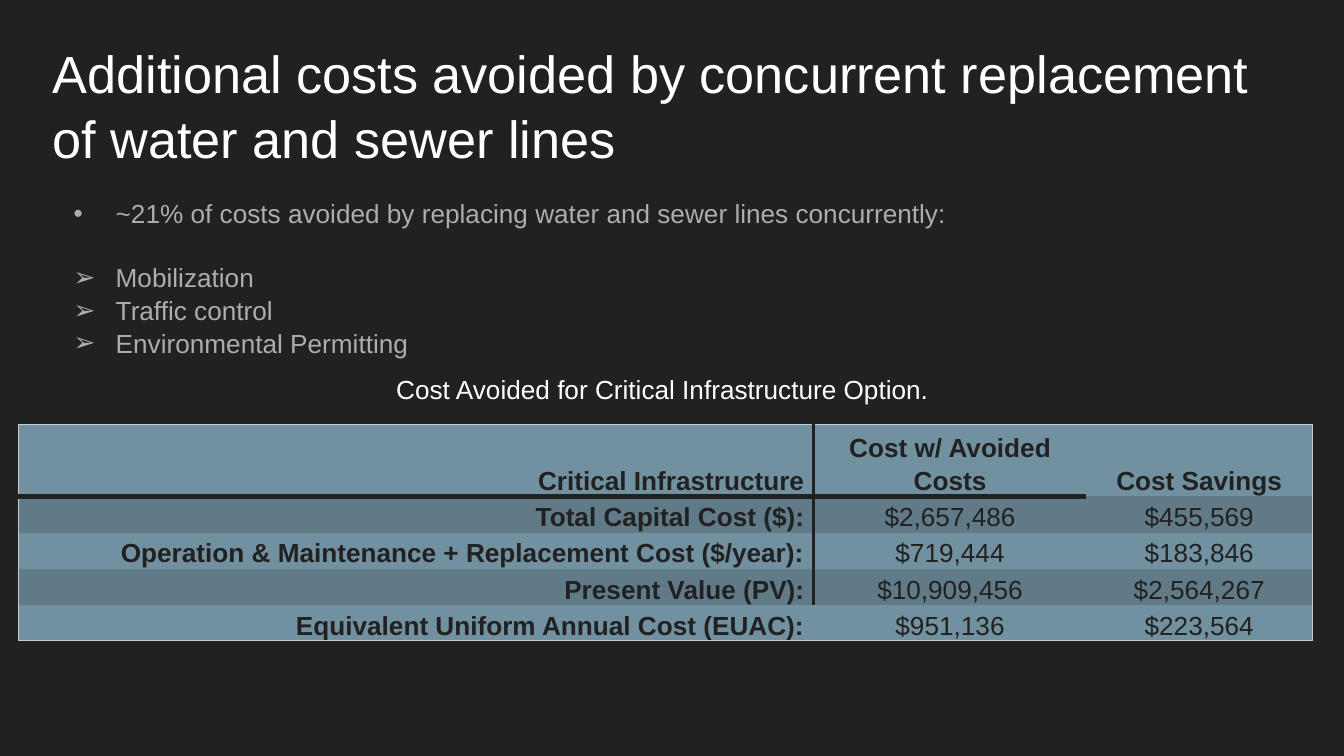
from dataclasses import dataclass

from lxml.etree import SubElement
from pptx import Presentation
from pptx.dml.color import RGBColor
from pptx.enum.text import MSO_ANCHOR, MSO_AUTO_SIZE, PP_ALIGN
from pptx.oxml.ns import qn
from pptx.util import Pt


@dataclass(frozen=True)
class Theme:
    font: str = "Arial"
    title_size: float = 28
    text_size: float = 14
    background: str = "212121"
    light: str = "FFFFFF"
    muted: str = "ADADAD"
    row: str = "7190A0"
    band: str = "617A87"
    frame: str = "C5CCD1"


THEME = Theme()
NO_GRID_STYLE = "{2D5ABB26-0587-4C30-8999-92F81FD0307C}"

BULLETS = [
    ("•", "~21% of costs avoided by replacing water and sewer lines concurrently:"),
    ("➢", "Mobilization"),
    ("➢", "Traffic control"),
    ("➢", "Environmental Permitting"),
]
COSTS = [
    ("Critical Infrastructure", "Cost w/ Avoided Costs", "Cost Savings"),
    ("Total Capital Cost ($):", "$2,657,486", "$455,569"),
    ("Operation & Maintenance + Replacement Cost ($/year):", "$719,444", "$183,846"),
    ("Present Value (PV):", "$10,909,456", "$2,564,267"),
    ("Equivalent Uniform Annual Cost (EUAC):", "$951,136", "$223,564"),
]


def style_paragraph(paragraph, size, color, bold=False, align=PP_ALIGN.LEFT, spacing=1.0):
    paragraph.font.name = THEME.font
    paragraph.font.size = Pt(size)
    paragraph.font.bold = bold
    paragraph.font.color.rgb = RGBColor.from_string(color)
    paragraph.alignment = align
    paragraph.line_spacing = spacing


def set_bullet(paragraph, character, indent):
    properties = paragraph._p.get_or_add_pPr()
    properties.set("marL", str(Pt(indent)))
    properties.set("indent", str(-Pt(indent)))
    color = SubElement(properties, qn("a:buClr"))
    SubElement(color, qn("a:srgbClr"), val=THEME.muted)
    SubElement(properties, qn("a:buFont"), typeface=THEME.font)
    SubElement(properties, qn("a:buChar"), char=character)


def set_border(cell, side, color, width):
    """Draw one edge of a cell; side is L, R, T or B, called in that order."""
    line = SubElement(cell._tc.get_or_add_tcPr(), qn(f"a:ln{side}"), w=str(Pt(width)))
    fill = SubElement(line, qn("a:solidFill"))
    SubElement(fill, qn("a:srgbClr"), val=color)


def add_title(slide, text, left, top, width, height):
    title = slide.shapes.title
    title.left, title.top, title.width, title.height = map(Pt, (left, top, width, height))
    frame = title.text_frame
    frame.text = text
    frame.word_wrap = True
    frame.auto_size = MSO_AUTO_SIZE.NONE
    frame.vertical_anchor = MSO_ANCHOR.TOP
    frame.margin_top = frame.margin_bottom = Pt(7.2)
    style_paragraph(frame.paragraphs[0], THEME.title_size, THEME.light, spacing=1.05)


def add_bullets(slide, bullets, left, top, width, height):
    frame = slide.shapes.add_textbox(*map(Pt, (left, top, width, height))).text_frame
    frame.word_wrap = True
    frame.text = "\n".join(text for _, text in bullets)
    for paragraph, (character, _) in zip(frame.paragraphs, bullets):
        style_paragraph(paragraph, THEME.text_size, THEME.muted, spacing=1.05)
        paragraph.space_before = Pt(0)
        set_bullet(paragraph, character, indent=22.5)
    frame.paragraphs[0].space_after = Pt(16.5)


def add_caption(slide, text, left, top, width, height):
    frame = slide.shapes.add_textbox(*map(Pt, (left, top, width, height))).text_frame
    frame.word_wrap = False
    frame.text = text
    style_paragraph(frame.paragraphs[0], THEME.text_size, THEME.light)


def add_cost_table(slide, rows, left, top, column_widths, row_heights):
    box = map(Pt, (left, top, sum(column_widths), sum(row_heights)))
    table = slide.shapes.add_table(len(rows), len(column_widths), *box).table
    table.first_row = table.horz_banding = False
    table._tbl.tblPr.find(qn("a:tableStyleId")).text = NO_GRID_STYLE
    for column, width in zip(table.columns, column_widths):
        column.width = Pt(width)
    for row, height in zip(table.rows, row_heights):
        row.height = Pt(height)
    for row_index, values in enumerate(rows):
        for column_index, text in enumerate(values):
            fill_cost_cell(table, row_index, column_index, text)


def fill_cost_cell(table, row_index, column_index, text):
    cell = table.cell(row_index, column_index)
    is_header, is_label = row_index == 0, column_index == 0
    last_row, last_column = len(table.rows) - 1, len(table.columns) - 1
    cell.text = text
    cell.vertical_anchor = MSO_ANCHOR.BOTTOM
    cell.margin_left = cell.margin_right = Pt(5)
    cell.margin_top = cell.margin_bottom = Pt(0)
    style_paragraph(cell.text_frame.paragraphs[0], THEME.text_size, THEME.background,
                    bold=is_header or is_label,
                    align=PP_ALIGN.RIGHT if is_label else PP_ALIGN.CENTER, spacing=1.15)

    if is_label:
        set_border(cell, "L", THEME.frame, 0.75)
    if is_label and row_index < last_row:
        set_border(cell, "R", THEME.background, 2)
    elif column_index == last_column:
        set_border(cell, "R", THEME.frame, 0.75)
    if is_header:
        set_border(cell, "T", THEME.frame, 0.75)
    if is_header and column_index < last_column:
        set_border(cell, "B", THEME.background, 3)
    elif row_index == last_row:
        set_border(cell, "B", THEME.frame, 0.75)

    cell.fill.solid()
    cell.fill.fore_color.rgb = RGBColor.from_string(THEME.band if row_index % 2 else THEME.row)


def main():
    presentation = Presentation()
    presentation.slide_width, presentation.slide_height = Pt(720), Pt(405)
    slide = presentation.slides.add_slide(presentation.slide_layouts[5])
    slide.background.fill.solid()
    slide.background.fill.fore_color.rgb = RGBColor.from_string(THEME.background)

    add_title(slide, "Additional costs avoided by concurrent replacement of water and sewer lines",
              21, 13, 671, 45)
    add_bullets(slide, BULLETS, 32.4, 101.5, 574.6, 95)
    add_caption(slide, "Cost Avoided for Critical Infrastructure Option.", 205.2, 196.5, 302, 24)
    add_cost_table(slide, COSTS, 10, 227.3, (426, 146, 121), (36.8, 18, 18, 18, 18))
    presentation.save("out.pptx")


if __name__ == "__main__":
    main()
